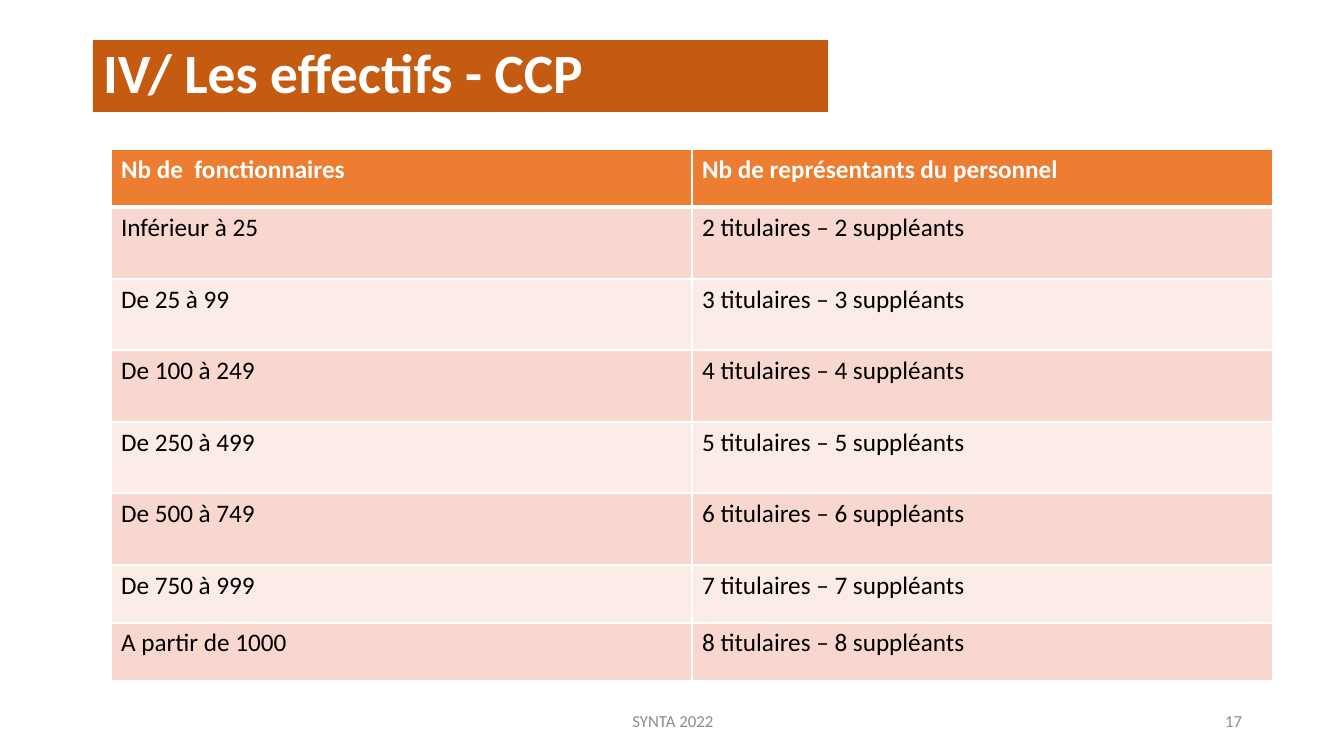
from lxml.etree import SubElement
from pptx import Presentation
from pptx.dml.color import RGBColor
from pptx.enum.text import MSO_ANCHOR, MSO_AUTO_SIZE, PP_ALIGN
from pptx.oxml.ns import qn
from pptx.util import Emu, Pt

PX = 914400 / 100.8
FONT = "Calibri"
WHITE = RGBColor(0xFF, 0xFF, 0xFF)
BLACK = RGBColor(0x00, 0x00, 0x00)
GRAY = RGBColor(0x8C, 0x8C, 0x8C)
RUST = RGBColor(0xC5, 0x5A, 0x11)
ORANGE = RGBColor(0xED, 0x7D, 0x31)
ROSE = RGBColor(0xF8, 0xD7, 0xCE)
PALE = RGBColor(0xFC, 0xEC, 0xE8)

STAFF = [
    "Inférieur à 25",
    "De 25 à 99",
    "De 100 à 249",
    "De 250 à 499",
    "De 500 à 749",
    "De 750 à 999",
    "A partir de 1000",
]
HEAD = ("Nb de  fonctionnaires", "Nb de représentants du personnel")
ROWS = [HEAD] + [
    (staff, f"{seats} titulaires – {seats} suppléants")
    for seats, staff in enumerate(STAFF, 2)
]
HEIGHTS = [58] + [72, 71, 72, 71, 72] + [58, 58]


def px(count):
    return Emu(round(count * PX))


class Slide:
    """Draws styled elements, measured in px, on the current slide."""

    def __init__(self, deck):
        self.slide = deck.slides.add_slide(deck.slide_layouts[5])
        self.shapes = self.slide.shapes

    def label(self, frame, text, size, color, bold=False, align=PP_ALIGN.LEFT):
        frame.text = text
        para = frame.paragraphs[0]
        para.alignment = align
        font = para.runs[0].font
        font.name, font.size, font.bold = FONT, Pt(size), bold
        font.color.rgb = color
        return para

    def title(self, text, left, top, width, height):
        shape = self.shapes.title
        shape.left, shape.top = px(left), px(top)
        shape.width, shape.height = px(width), px(height)
        shape.fill.solid()
        shape.fill.fore_color.rgb = RUST
        frame = shape.text_frame
        frame.auto_size = MSO_AUTO_SIZE.NONE
        frame.vertical_anchor = MSO_ANCHOR.MIDDLE
        self.label(frame, text, 39.6, WHITE, True).line_spacing = 0.9

    def footer(self, text, left, width, align):
        box = self.shapes.add_textbox(px(left), px(701), px(width), px(40))
        frame = box.text_frame
        frame.word_wrap = True
        frame.vertical_anchor = MSO_ANCHOR.MIDDLE
        self.label(frame, text, 12, GRAY, align=align)

    def border(self, cell, sides):
        props = cell._tc.get_or_add_tcPr()
        for index, (side, width) in enumerate(sides.items()):
            line = SubElement(props, qn(f"a:ln{side}"), w=str(Pt(width)))
            fill = SubElement(line, qn("a:solidFill"))
            SubElement(fill, qn("a:srgbClr"), val=str(WHITE))
            props.insert(index, line)

    def table(self, rows, heights, left, top, width):
        size = len(rows), len(rows[0])
        place = px(left), px(top), px(width), px(sum(heights))
        table = self.shapes.add_table(*size, *place).table
        for y, (texts, height) in enumerate(zip(rows, heights)):
            table.rows[y].height = px(height)
            head = y == 0
            back = ORANGE if head else (ROSE if y % 2 else PALE)
            sides = {"L": 1, "R": 1, "T": 3 if y == 1 else 1, "B": 3 if head else 1}
            for x, text in enumerate(texts):
                cell = table.cell(y, x)
                cell.fill.solid()
                cell.fill.fore_color.rgb = back
                self.border(cell, sides)
                ink = WHITE if head else BLACK
                self.label(cell.text_frame, text, 18, ink, head)


def main():
    deck = Presentation()
    deck.slide_width, deck.slide_height = px(1344), px(756)
    slide = Slide(deck)
    slide.title("IV/ Les effectifs - CCP", 93, 40, 735, 72)
    slide.footer("SYNTA 2022", 446, 454, PP_ALIGN.CENTER)
    slide.footer("17", 950, 302, PP_ALIGN.RIGHT)
    slide.table(ROWS, HEIGHTS, 111, 149, 1162)
    deck.save("out.pptx")


if __name__ == "__main__":
    main()
